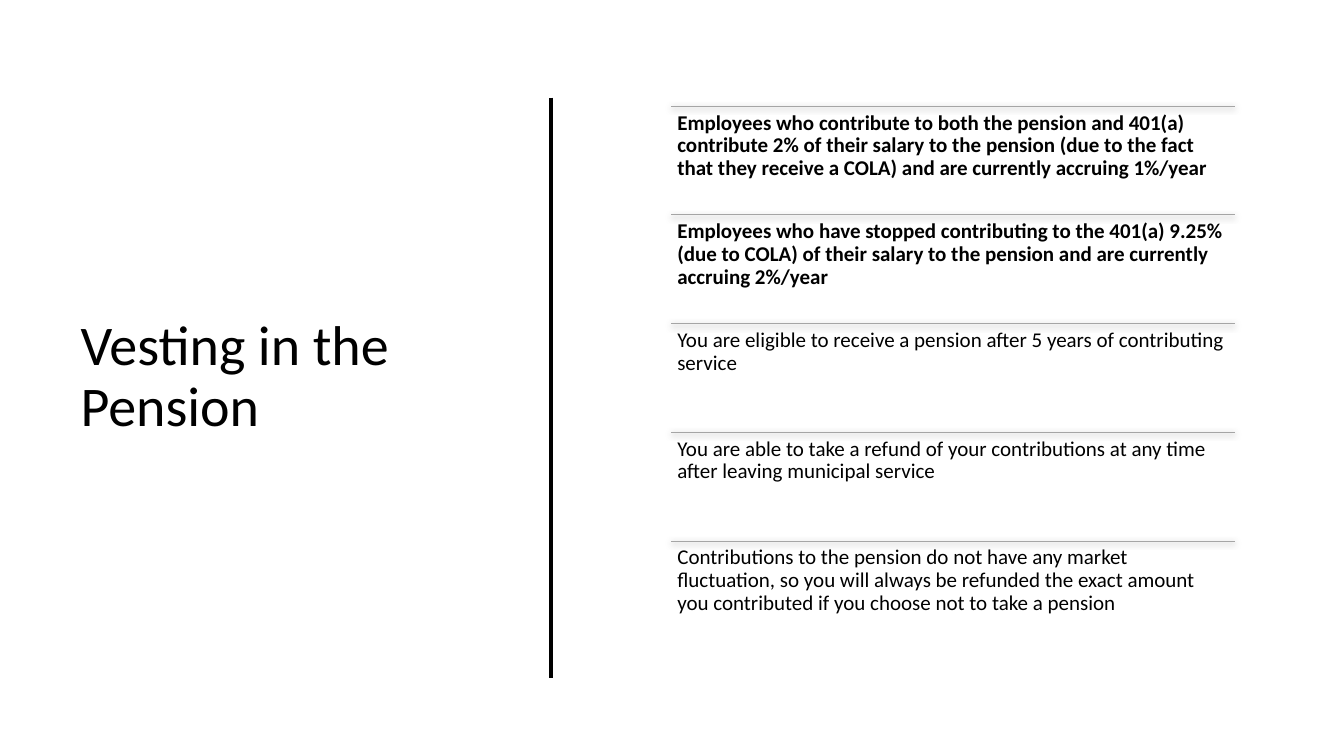
"""Build the slide on vesting in the pension."""
from lxml import etree
from pptx import Presentation
from pptx.dml.color import RGBColor
from pptx.enum.shapes import MSO_CONNECTOR
from pptx.enum.text import MSO_ANCHOR
from pptx.oxml.ns import qn
from pptx.util import Cm, Pt

COLORS = {"text": "000000", "divider": "000000", "rule": "A5A5A5", "shadow": "000000"}

prs = Presentation()
prs.slide_width, prs.slide_height = Cm(33.87), Cm(19.05)
slide = prs.slides.add_slide(prs.slide_layouts[6])


def add_text(text, left, top, width, height, size, bold=False,
             anchor=MSO_ANCHOR.TOP, side_inset=0.25, end_inset=0.13):
    frame = slide.shapes.add_textbox(Cm(left), Cm(top), Cm(width), Cm(height)).text_frame
    frame.word_wrap = True
    frame.vertical_anchor = anchor
    frame.margin_left = frame.margin_right = Cm(side_inset)
    frame.margin_top = frame.margin_bottom = Cm(end_inset)
    paragraph = frame.paragraphs[0]
    paragraph.line_spacing = 0.9
    run = paragraph.add_run()
    run.text = text
    run.font.name = "Calibri"
    run.font.size = Pt(size)
    run.font.bold = bold
    run.font.color.rgb = RGBColor.from_string(COLORS["text"])


def add_line(x1, y1, x2, y2, color, weight):
    line = slide.shapes.add_connector(MSO_CONNECTOR.STRAIGHT, Cm(x1), Cm(y1), Cm(x2), Cm(y2))
    line.line.color.rgb = RGBColor.from_string(COLORS[color])
    line.line.width = Pt(weight)
    return etree.SubElement(line._element.spPr, qn("a:effectLst"))


add_text("Vesting in the Pension", 1.78, 5.61, 10.16, 7.82, 40, anchor=MSO_ANCHOR.MIDDLE)

rules = [
    ("Employees who contribute to both the pension and 401(a) contribute 2% of their salary "
     "to the pension (due to the fact that they receive a COLA) and are currently accruing "
     "1%/year", True),
    ("Employees who have stopped contributing to the 401(a) 9.25% (due to COLA) of their "
     "salary to the pension and are currently accruing 2%/year", True),
    ("You are eligible to receive a pension after 5 years of contributing service", False),
    ("You are able to take a refund of your contributions at any time after leaving "
     "municipal service", False),
    ("Contributions to the pension do not have any market fluctuation, so you will always "
     "be refunded the exact amount you contributed if you choose not to take a pension", False),
]
rules_left, rules_top, rules_width, row_height = 16.92, 2.67, 14.21, 2.74

for row, (rule, bold) in enumerate(rules):
    top = rules_top + row * row_height
    effects = add_line(rules_left, top, rules_left + rules_width, top, "rule", 0.5)
    shadow = etree.SubElement(effects, qn("a:outerShdw"), blurRad=str(Pt(4.5)),
                              dist=str(Pt(1.5)), dir="5400000", algn="ctr", rotWithShape="0")
    shade = etree.SubElement(shadow, qn("a:srgbClr"), val=COLORS["shadow"])
    etree.SubElement(shade, qn("a:alpha"), val="63000")
    add_text(rule, rules_left, top, rules_width, row_height, 15, bold=bold,
             side_inset=0.15, end_inset=0.15)

add_line(13.89, 2.46, 13.89, 17.09, "divider", 3)

prs.save("out.pptx")
